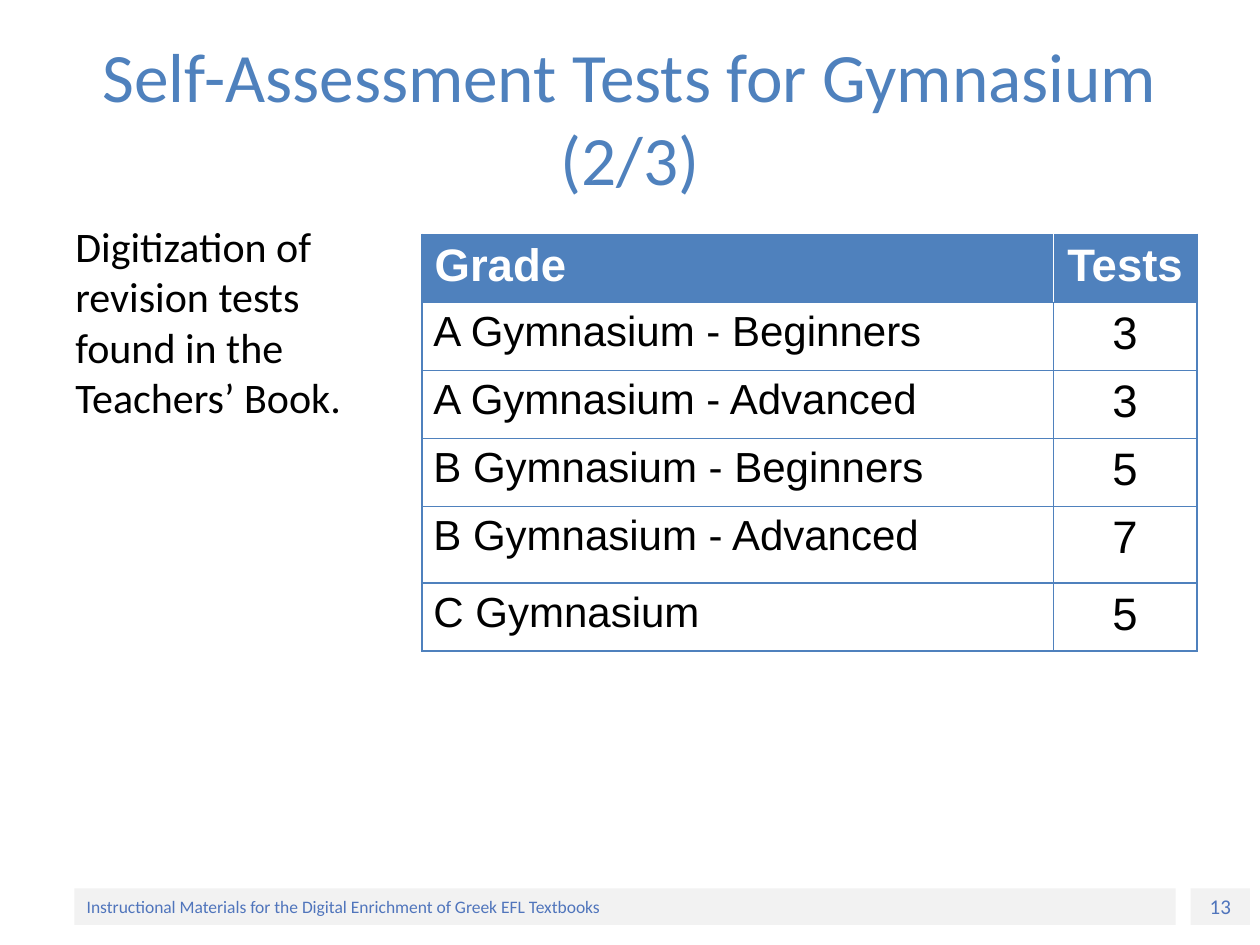
"""Build the Gymnasium self-assessment tests slide."""
from lxml import etree
from pptx import Presentation
from pptx.dml.color import RGBColor
from pptx.enum.shapes import MSO_SHAPE
from pptx.enum.text import MSO_ANCHOR, PP_ALIGN
from pptx.oxml.ns import qn
from pptx.util import Inches, Pt

RECTANGLE = MSO_SHAPE.RECTANGLE
TOP, MIDDLE = MSO_ANCHOR.TOP, MSO_ANCHOR.MIDDLE
LEFT, CENTER = PP_ALIGN.LEFT, PP_ALIGN.CENTER
BLUE = RGBColor(0x4F, 0x81, 0xBD)
FOOTER_BLUE = RGBColor(0x50, 0x75, 0xBC)
GRAY = RGBColor(0xF2, 0xF2, 0xF2)
WHITE = RGBColor(0xFF, 0xFF, 0xFF)
BLACK = RGBColor(0, 0, 0)

TITLE = "Self-Assessment Tests for Gymnasium (2/3)"
BODY = "Digitization of revision tests found in the Teachers’ Book."
TABLE = [
    ("Grade", "Tests"),
    ("A Gymnasium - Beginners", "3"),
    ("A Gymnasium - Advanced", "3"),
    ("B Gymnasium - Beginners", "5"),
    ("B Gymnasium - Advanced", "7"),
    ("C Gymnasium", "5"),
]
COLUMN_WIDTHS = (5.01, 1.14)
ROW_HEIGHTS = (0.54, 0.54, 0.54, 0.54, 0.61, 0.54)
TABLE_LEFT, TABLE_TOP = 3.35, 1.86
FOOTER_TOP, FOOTER_HEIGHT = 7.05, 0.29
FOOTERS = [
    (9.45, 0.47, "13", 12, CENTER),
    (0.59, 8.74, "Instructional Materials for the Digital Enrichment of Greek EFL Textbooks", 10, LEFT),
]


def write(frame, text, size, color, font="Calibri", align=LEFT, bold=False):
    paragraph = frame.paragraphs[0]
    paragraph.alignment = align
    run = paragraph.add_run()
    run.text = text
    run.font.name, run.font.size, run.font.bold = font, Pt(size), bold
    run.font.color.rgb = color


def place(shape, left, top, width, height):
    shape.left, shape.top = Inches(left), Inches(top)
    shape.width, shape.height = Inches(width), Inches(height)


def set_borders(cell, colors):
    properties = cell._tc.get_or_add_tcPr()
    for index, (side, color) in enumerate(colors.items()):
        line = etree.Element(qn(f"a:{side}"), w=str(Pt(1)))
        fill = etree.SubElement(line, qn("a:solidFill"))
        etree.SubElement(fill, qn("a:srgbClr"), val=str(color))
        properties.insert(index, line)


def add_footers(slide):
    for left, width, text, size, align in FOOTERS:
        shape = slide.shapes.add_shape(RECTANGLE, 0, 0, 0, 0)
        place(shape, left, FOOTER_TOP, width, FOOTER_HEIGHT)
        shape.shadow.inherit = False
        shape.fill.solid()
        shape.fill.fore_color.rgb = GRAY
        shape.line.fill.background()
        shape.text_frame.vertical_anchor = MIDDLE
        write(shape.text_frame, text, size, FOOTER_BLUE, align=align)


def add_grades(slide):
    table = slide.shapes.add_table(
        len(TABLE), len(COLUMN_WIDTHS), Inches(TABLE_LEFT), Inches(TABLE_TOP),
        Inches(sum(COLUMN_WIDTHS)), Inches(sum(ROW_HEIGHTS))).table
    table.horz_banding = False
    for column, width in zip(table.columns, COLUMN_WIDTHS):
        column.width = Inches(width)
    for row, (values, height) in enumerate(zip(TABLE, ROW_HEIGHTS)):
        table.rows[row].height = Inches(height)
        header = row == 0
        for column, value in enumerate(values):
            cell = table.cell(row, column)
            cell.vertical_anchor = TOP
            if header:
                cell.fill.solid()
                cell.fill.fore_color.rgb = BLUE
            else:
                cell.fill.background()
            if column == 0 and not header:
                cell.margin_left = cell.margin_right = Inches(0.09)
            colors = dict.fromkeys(("lnL", "lnR", "lnT", "lnB"), BLUE)
            if header:
                colors["lnL" if column else "lnR"] = WHITE
            set_borders(cell, colors)
            write(cell.text_frame, value, 26 if header or column else 24,
                  WHITE if header else BLACK, "Arial", CENTER if column else LEFT, header)


def main():
    presentation = Presentation()
    presentation.slide_width, presentation.slide_height = Inches(10), Inches(7.5)
    slide = presentation.slides.add_slide(presentation.slide_layouts[5])
    title = slide.shapes.title
    place(title, 0.5, 0.3, 9, 1.25)
    title.text_frame.vertical_anchor = MIDDLE
    write(title.text_frame, TITLE, 39.6, BLUE, align=CENTER)
    add_footers(slide)
    add_grades(slide)
    body = slide.shapes.add_textbox(0, 0, 0, 0)
    place(body, 0.5, 1.7, 2.69, 5.04)
    body.text_frame.word_wrap = True
    write(body.text_frame, BODY, 24, BLACK)
    presentation.save("out.pptx")


if __name__ == "__main__":
    main()
